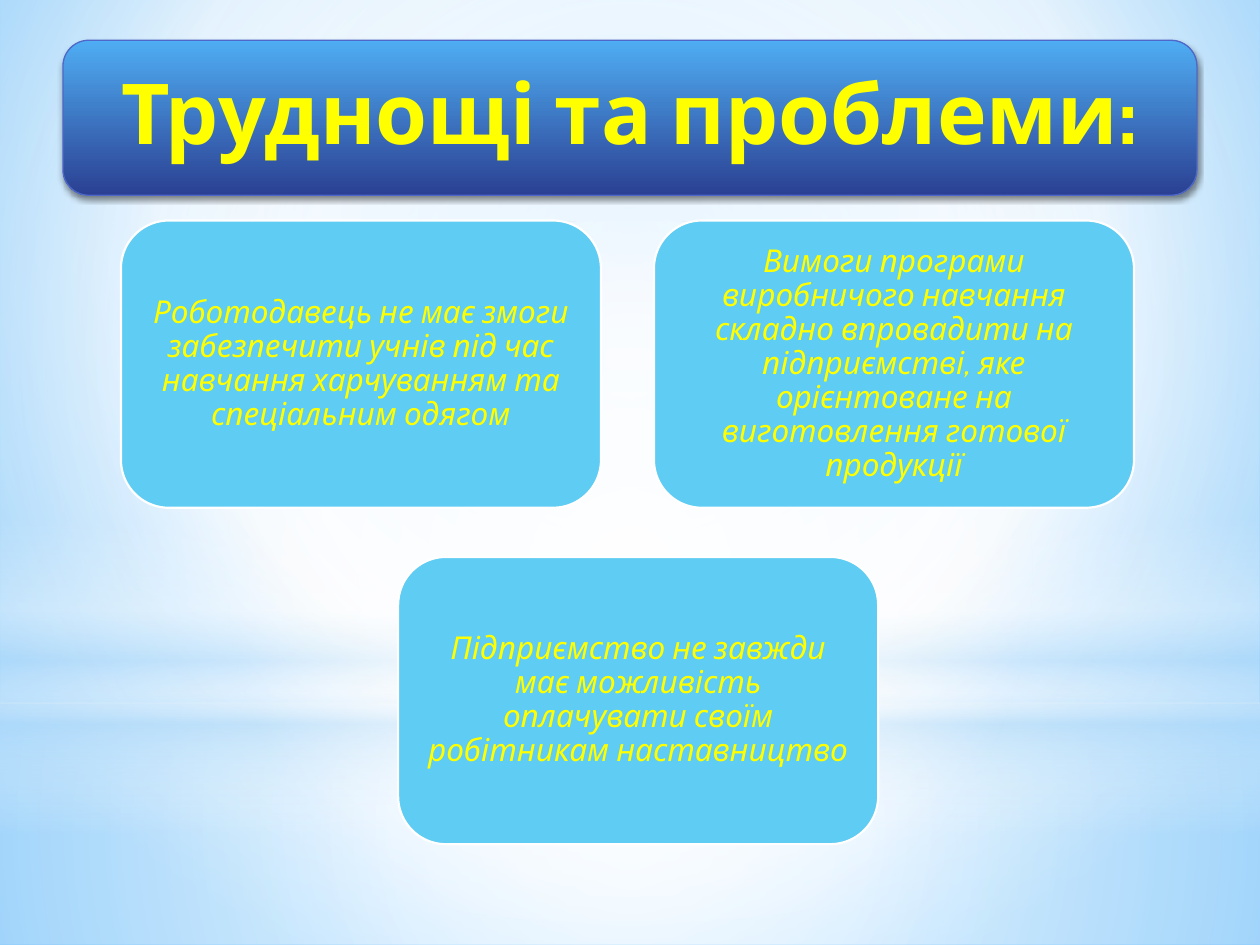
from lxml.etree import SubElement
from pptx import Presentation
from pptx.dml.color import RGBColor
from pptx.enum.shapes import MSO_SHAPE
from pptx.enum.text import MSO_ANCHOR, MSO_AUTO_SIZE, PP_ALIGN
from pptx.oxml.ns import qn
from pptx.util import Inches, Pt

THEME = {
    "yellow": RGBColor.from_string("FFFF00"),
    "card": RGBColor.from_string("5ECCF3"),
    "card_line": RGBColor.from_string("FFFFFF"),
    "banner_line": RGBColor.from_string("4E67C8"),
    "banner": [(0, "4FADF3", 100), (100, "2B4092", 100)],
    "sky": [(0, "9ED5FF", 100), (60, "FFFFFF", 100), (100, "5BB9FF", 100)],
    "floor": [(0, "FFFFFF", 91), (37, "FFFFFF", 76), (100, "B4DCFA", 79)],
    "wall": [(0, "FFFFFF", 89), (48, "FFFFFF", 62), (100, "B4DCFA", 79)],
    "horizon": [(0, "FFFFFF", 0), (29, "FFFFFF", 30), (45, "B4DCFA", 40),
                (55, "FFFFFF", 26), (65, "B4DCFA", 60), (100, "FFFFFF", 0)],
    "glow": [(0, "FFFFFF", 100), (56, "FFFFFF", 0)],
    "title_font": {"name": "Cabin", "size": Pt(48), "bold": True},
    "card_font": {"name": "Cabin", "size": Pt(18), "italic": True},
}
CENTRE = (50, 50, 50, 50)

prs = Presentation()
prs.slide_width, prs.slide_height = Inches(10), Inches(7.5)
COL, ROW = prs.slide_width / 100, prs.slide_height / 75
s = prs.slides.add_slide(prs.slide_layouts[5])


def set_gradient(fill, element, stops, focus=None):
    fill.gradient()
    grad = next(element.iter(qn("a:gradFill")))
    grad.clear()
    grad.set("rotWithShape", "1")
    gs_list = SubElement(grad, qn("a:gsLst"))
    for pos, color, alpha in stops:
        gs = SubElement(gs_list, qn("a:gs"), pos=str(pos * 1000))
        clr = SubElement(gs, qn("a:srgbClr"), val=color)
        if alpha < 100:
            SubElement(clr, qn("a:alpha"), val=str(alpha * 1000))
    if focus:
        shade = SubElement(grad, qn("a:path"), path="circle")
        SubElement(shade, qn("a:fillToRect"),
                   **{k: str(v * 1000) for k, v in zip("ltrb", focus)})
    else:
        SubElement(grad, qn("a:lin"), ang="5400000", scaled="0")


def write(sp, text, font, inset):
    tf = sp.text_frame
    tf.text = text
    frame = {"word_wrap": True, "auto_size": MSO_AUTO_SIZE.NONE,
             "vertical_anchor": MSO_ANCHOR.MIDDLE}
    for side in ("left", "top", "right", "bottom"):
        frame["margin_" + side] = Inches(inset)
    p = tf.paragraphs[0]
    r = p.runs[0]
    r.font.color.rgb = THEME["yellow"]
    para = {"alignment": PP_ALIGN.CENTER, "line_spacing": 0.9}
    for obj, values in ((tf, frame), (p, para), (r.font, font)):
        for name, value in values.items():
            setattr(obj, name, value)


set_gradient(s.background.fill, s.element, THEME["sky"], (20, 10, 20, 60))

for kind, top, height, stops, focus in (
    (MSO_SHAPE.RECTANGLE, 55.8, 19.2, "floor", CENTRE),
    (MSO_SHAPE.RECTANGLE, 0, 55.8, "wall", CENTRE),
    (MSO_SHAPE.RECTANGLE, 41.2, 25, "horizon", None),
    (MSO_SHAPE.OVAL, 17.5, 55.8, "glow", CENTRE),
):
    sp = s.shapes.add_shape(kind, 0, int(top * ROW), prs.slide_width, int(height * ROW))
    sp.shadow.inherit = False
    sp.line.fill.background()
    set_gradient(sp.fill, sp.element, THEME[stops], focus)

sp = s.shapes.add_shape(MSO_SHAPE.ROUNDED_RECTANGLE, int(5 * COL), int(3.2 * ROW),
                        int(90 * COL), int(12.3 * ROW))
set_gradient(sp.fill, sp.element, THEME["banner"])
sp.line.color.rgb = THEME["banner_line"]
sp.line.width = Pt(0.75)
sp.shadow.inherit = False
shadow = SubElement(next(sp.element.iter(qn("a:effectLst"))), qn("a:outerShdw"),
                    blurRad=str(Pt(3.1)), dist=str(Pt(1.8)), dir="5400000", rotWithShape="0")
SubElement(SubElement(shadow, qn("a:srgbClr"), val="000000"), qn("a:alpha"), val="45000")

title = s.shapes.title
title.left, title.top = int(5.6 * COL), int(3.8 * ROW)
title.width, title.height = int(88.8 * COL), int(11.1 * ROW)
title.element.getparent().append(title.element)
write(title, "Труднощі та проблеми:", THEME["title_font"], 0.2)

for left, top, text in (
    (9.6, 17.5, "Роботодавець не має змоги забезпечити учнів під час навчання "
                "харчуванням та спеціальним одягом"),
    (51.9, 17.5, "Вимоги програми виробничого навчання складно впровадити на "
                 "підприємстві, яке орієнтоване на виготовлення готової продукції"),
    (31.6, 44.2, "Підприємство не завжди має можливість оплачувати своїм "
                 "робітникам наставництво"),
):
    sp = s.shapes.add_shape(MSO_SHAPE.FLOWCHART_ALTERNATE_PROCESS, int(left * COL),
                            int(top * ROW), int(38.1 * COL), int(22.8 * ROW))
    sp.shadow.inherit = False
    sp.fill.solid()
    sp.fill.fore_color.rgb = THEME["card"]
    sp.line.color.rgb = THEME["card_line"]
    sp.line.width = Pt(1.25)
    write(sp, text, THEME["card_font"], 0.07)

prs.save("out.pptx")
